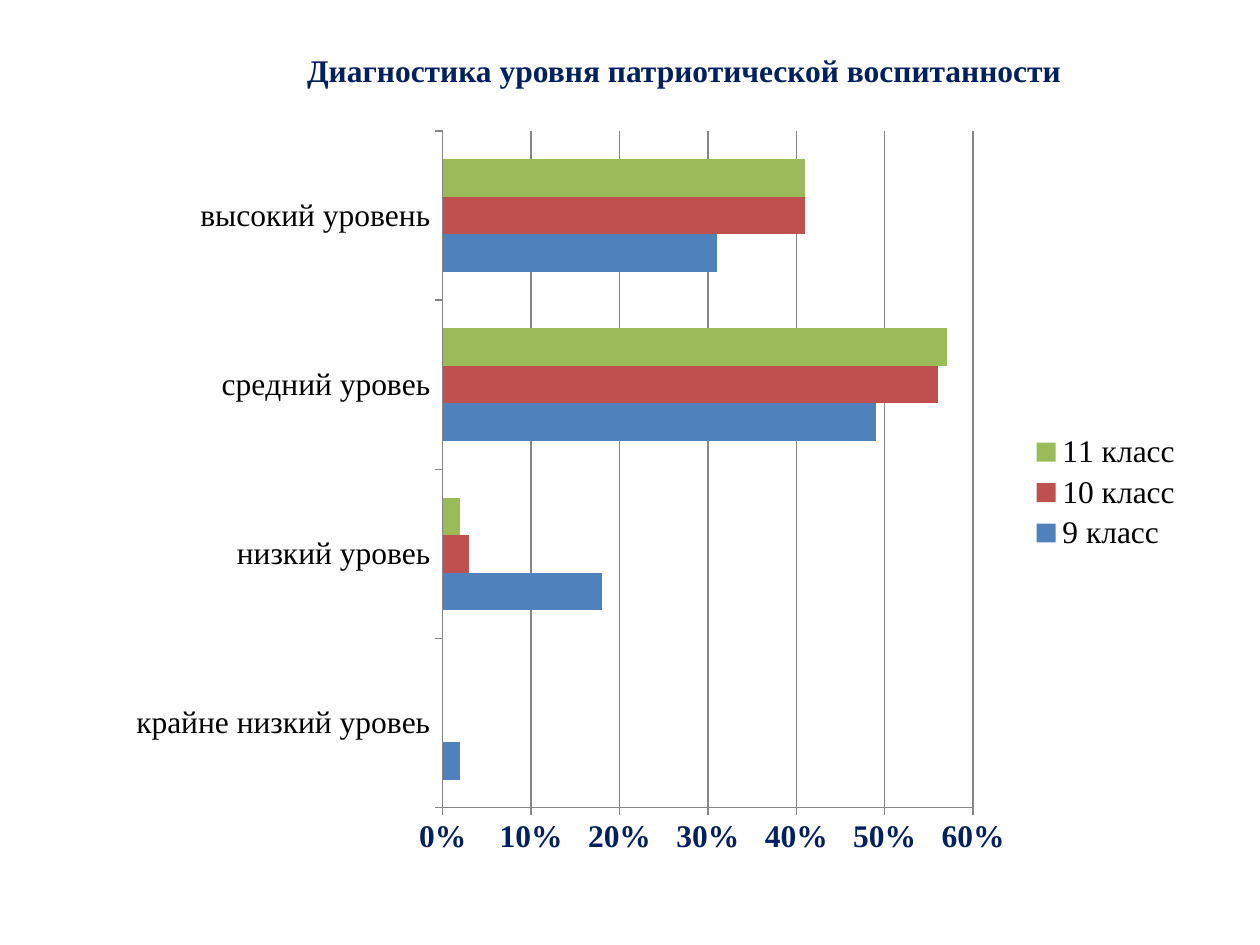
from pptx import Presentation
from pptx.chart.data import CategoryChartData
from pptx.dml.color import RGBColor
from pptx.enum import chart as ch, text
from pptx.util import Inches, Pt

NAVY = RGBColor(0x00, 0x20, 0x60)
BLACK = RGBColor(0x00, 0x00, 0x00)
GRAY = RGBColor(0x86, 0x86, 0x86)
BLUE = RGBColor(0x4F, 0x81, 0xBD)
RED = RGBColor(0xC0, 0x50, 0x4D)
GREEN = RGBColor(0x9B, 0xBB, 0x59)

LEVELS = ["крайне низкий уровеь", "низкий уровеь", "средний уровеь", "высокий уровень"]
GRADES = [
    ("9 класс", BLUE, (0.02, 0.18, 0.49, 0.31)),
    ("10 класс", RED, (None, 0.03, 0.56, 0.41)),
    ("11 класс", GREEN, (None, 0.02, 0.57, 0.41)),
]


class Deck:
    face = "Times New Roman"
    size = Pt(18)

    def __init__(self):
        self.prs = Presentation()
        self.prs.slide_width, self.prs.slide_height = Inches(10), Inches(7.5)
        self.slide = self.prs.slides.add_slide(self.prs.slide_layouts[6])

    def style(self, font, color=BLACK, bold=False):
        font.name, font.size, font.bold = self.face, self.size, bold
        font.color.rgb = color

    def title(self, words, *box):
        frame = self.slide.shapes.add_textbox(*map(Inches, box)).text_frame
        frame.word_wrap = True
        frame.auto_size = text.MSO_AUTO_SIZE.SHAPE_TO_FIT_TEXT
        frame.text = words
        para = frame.paragraphs[0]
        para.alignment = text.PP_ALIGN.CENTER
        self.style(para.runs[0].font, NAVY, True)

    def axis(self, axis, color, bold):
        axis.major_tick_mark = ch.XL_TICK_MARK.OUTSIDE
        axis.minor_tick_mark = ch.XL_TICK_MARK.NONE
        axis.format.line.color.rgb = GRAY
        self.style(axis.tick_labels.font, color, bold)

    def bars(self, cats, rows, *box):
        data = CategoryChartData(number_format="0%")
        data.categories = cats
        for name, _, vals in rows:
            data.add_series(name, vals)
        chart = self.slide.shapes.add_chart(
            ch.XL_CHART_TYPE.BAR_CLUSTERED, *map(Inches, box), data).chart
        chart.has_title = False
        self.style(chart.font)
        chart.font.name = "Calibri"

        # Bars
        plot = chart.plots[0]
        plot.gap_width = 150
        plot.vary_by_categories = False
        for bar, (_, color, _) in zip(plot.series, rows):
            bar.format.fill.solid()
            bar.format.fill.fore_color.rgb = color

        # Axes
        self.axis(chart.category_axis, BLACK, False)
        value = chart.value_axis
        self.axis(value, NAVY, True)
        value.minimum_scale, value.maximum_scale, value.major_unit = 0, 0.6, 0.1
        value.has_major_gridlines = True
        value.major_gridlines.format.line.color.rgb = GRAY
        value.tick_labels.number_format = "0%"
        value.tick_labels.number_format_is_linked = False

        # Legend
        chart.has_legend = True
        chart.legend.position = ch.XL_LEGEND_POSITION.RIGHT
        chart.legend.include_in_layout = False
        self.style(chart.legend.font)


def main():
    deck = Deck()
    deck.title("Диагностика уровня патриотической воспитанности", 1.77, 0.36, 7.32, 0.4)
    deck.bars(LEVELS, GRADES, 0.91, 0.92, 8.58, 5.98)
    deck.prs.save("out.pptx")


if __name__ == "__main__":
    main()
